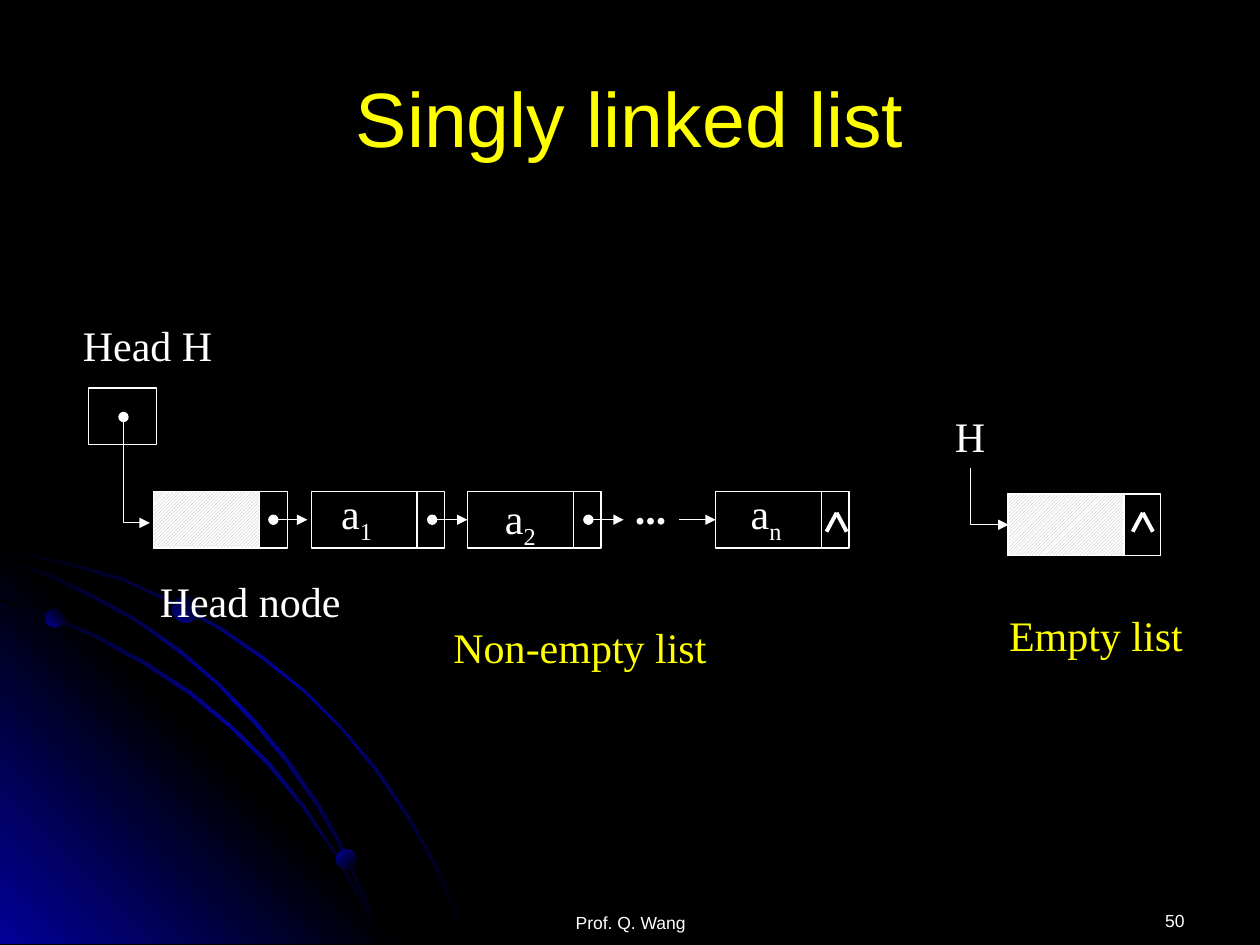
from copy import deepcopy
from lxml.etree import SubElement
from pptx import Presentation
from pptx.dml.color import RGBColor
from pptx.enum.dml import MSO_PATTERN
from pptx.enum.shapes import MSO_CONNECTOR as LINK, MSO_SHAPE as SHAPE
from pptx.enum.text import MSO_ANCHOR, MSO_AUTO_SIZE, PP_ALIGN
from pptx.oxml.ns import qn
from pptx.util import Inches, Pt

BLACK = RGBColor(0, 0, 0)
WHITE = RGBColor(255, 255, 255)
YELLOW = RGBColor(255, 255, 0)
BLUE = RGBColor(1, 1, 153)
HATCH = RGBColor(178, 178, 178)

OUTER_ARC = [
    (0.57, 4.47), (0.28, 4.41), (0, 4.35), (0, 4.38), (0.28, 4.43), (0.56, 4.49),
    (0.97, 4.61), (1.35, 4.78), (1.73, 4.99), (2.08, 5.23), (2.41, 5.49), (2.71, 5.79),
    (2.98, 6.12), (3.23, 6.49), (3.37, 6.73), (3.5, 6.98), (3.6, 7.23), (3.7, 7.49),
    (3.72, 7.49), (3.62, 7.23), (3.52, 6.98), (3.39, 6.73), (3.25, 6.48), (3, 6.11),
    (2.72, 5.78), (2.42, 5.48), (2.09, 5.21), (1.74, 4.97), (1.36, 4.77), (0.98, 4.59)]
CORNER = [(3.22, 7.49), (0, 7.49), (0, 4.27)]
INNER_ARC = [
    (2.85, 7.14), (2.94, 7.32), (3.01, 7.49), (3.03, 7.49), (2.96, 7.3), (2.86, 7.12),
    (2.66, 6.76), (2.42, 6.4), (2.15, 6.06), (1.84, 5.76), (1.52, 5.49), (1.17, 5.26),
    (0.79, 5.05), (0.41, 4.88), (0, 4.75), (0, 4.77), (0.39, 4.9), (0.77, 5.07),
    (1.15, 5.28), (1.5, 5.51), (1.83, 5.78), (2.13, 6.08), (2.4, 6.41), (2.65, 6.77)]
MIDDLE_ARC = [
    (0, 4.42), (0, 4.44), (0.36, 4.57), (0.74, 4.75), (1.09, 4.94), (1.42, 5.18),
    (1.73, 5.44), (2.02, 5.75), (2.27, 6.05), (2.52, 6.41), (2.67, 6.67), (2.8, 6.94),
    (2.92, 7.22), (3.01, 7.49), (3.03, 7.49), (2.94, 7.2), (2.82, 6.93), (2.69, 6.65),
    (2.54, 6.39), (2.29, 6.03), (2.04, 5.73), (1.75, 5.43), (1.44, 5.16), (1.11, 4.93),
    (0.76, 4.73), (0.39, 4.55)]
GLOW = [BLACK, BLUE, BLACK]
SWEEPS = [(OUTER_ARC, GLOW, 45), (CORNER, [BLUE, BLACK, BLUE], 315),
          (INNER_ARC, GLOW, 45), (MIDDLE_ARC, GLOW, 45)]
BEADS = [(0.36, 4.83, 0.15, 315), (2.67, 6.74, 0.16, 45), (1.37, 4.73, 0.21, 315)]

ROW_TOP, NODE_W, NODE_H, DATA_W = 3.9, 1.06, 0.45, 0.84
ROW_MID = ROW_TOP + NODE_H / 2
HEAD_X = 1.22
NODES = [("1", 2.47, 2.61, 3.82), ("2", 3.71, 3.91, 3.86), ("n", 5.68, 5.86, 3.82)]
POINTERS = [(2.17, 2.44, None), (3.43, 3.71, "2"), (4.67, 4.95, None)]
NULL_TIPS = [6.64, 9.07]
LABELS = [
    ("Head H", 0.56, 2.49, 1.23, WHITE),
    ("Head node", 1.17, 4.52, 1.64, WHITE),
    ("H", 7.48, 3.21, 0.44, WHITE),
    ("Non-empty list", 3.5, 4.88, 2.21, YELLOW),
    ("Empty list", 7.91, 4.79, 1.58, YELLOW)]
FOOTERS = [("50", 7.17, 7.01, 2.33, PP_ALIGN.RIGHT),
           ("Prof. Q. Wang", 3.42, 7.03, 3.17, PP_ALIGN.CENTER)]

deck = Presentation()
deck.slide_width, deck.slide_height = Inches(10), Inches(7.5)
slide = deck.slides.add_slide(deck.slide_layouts[5])
slide.background.fill.solid()
slide.background.fill.fore_color.rgb = BLACK
shapes = slide.shapes


def outline(item, weight=0.75):
    item.line.color.rgb = WHITE
    item.line.width = Pt(weight)


def add_ends(item, head=None, tail=None):
    for tag, kind in (("a:headEnd", head), ("a:tailEnd", tail)):
        if kind:
            SubElement(item.line._get_or_add_ln(), qn(tag), type=kind)


def shade(item, colors, angle):
    item.shadow.inherit = False
    item.line.fill.background()
    item.fill.gradient()
    stop_list = item._element.spPr.find(qn("a:gradFill")).find(qn("a:gsLst"))
    for _ in colors[2:]:
        stop_list.append(deepcopy(stop_list[0]))
    for i, (stop, color) in enumerate(zip(item.fill.gradient_stops, colors)):
        stop.color.rgb = color
        stop.position = i / (len(colors) - 1)
    item.fill.gradient_angle = 360 - angle


def trace(points, close):
    builder = shapes.build_freeform(*map(Inches, points[0]))
    builder.add_line_segments([tuple(map(Inches, p)) for p in points[1:]], close=close)
    return builder.convert_to_shape()


def box(x, y, w, h, hatched=False):
    rect = shapes.add_shape(SHAPE.RECTANGLE, *map(Inches, (x, y, w, h)))
    rect.shadow.inherit = False
    if hatched:
        rect.fill.patterned()
        rect.fill.pattern = MSO_PATTERN.LIGHT_UPWARD_DIAGONAL
        rect.fill.fore_color.rgb = HATCH
        rect.fill.back_color.rgb = WHITE
    else:
        rect.fill.background()
    outline(rect)
    return rect


def line(x1, y1, x2, y2, weight=0.75, head=None, tail=None, kind=LINK.STRAIGHT):
    link = shapes.add_connector(kind, *map(Inches, (x1, y1, x2, y2)))
    outline(link, weight)
    add_ends(link, head, tail)
    SubElement(link._element.spPr, qn("a:effectLst"))
    return link


def label(text, x, y, w, color=WHITE, subscript="", bold=False):
    frame = shapes.add_textbox(*map(Inches, (x, y, w, 0.5))).text_frame
    frame.word_wrap = False
    frame.auto_size = MSO_AUTO_SIZE.SHAPE_TO_FIT_TEXT
    para = frame.paragraphs[0]
    para.font.name, para.font.size, para.font.bold = "Times New Roman", Pt(24), bold
    para.font.color.rgb = color
    para.add_run().text = text
    if subscript:
        index = para.add_run()
        index.text = subscript
        index.font._element.set("baseline", "-25000")


for points, colors, angle in SWEEPS:
    shade(trace(points, True), colors, angle)
for x, y, size, angle in BEADS:
    bead = shapes.add_shape(SHAPE.OVAL, *map(Inches, (x, y, size, size)))
    shade(bead, [BLUE, BLACK], angle)

title = shapes.title
title.left, title.top, title.width, title.height = map(Inches, (0.5, 0.3, 9, 1.25))
title.text_frame.text = "Singly linked list"
title.text_frame.vertical_anchor = MSO_ANCHOR.MIDDLE
heading = title.text_frame.paragraphs[0]
heading.alignment = PP_ALIGN.CENTER
heading.font.name, heading.font.size = "Arial", Pt(44)
heading.font.color.rgb = YELLOW

for text, x, y, w, align in FOOTERS:
    frame = shapes.add_textbox(*map(Inches, (x, y, w, 0.5))).text_frame
    frame.word_wrap = True
    frame.margin_top = Inches(0.21)
    note = frame.paragraphs[0]
    note.text, note.alignment = text, align
    note.font.name, note.font.size = "Arial", Pt(10)
    note.font.color.rgb = WHITE

box(0.7, 3.08, 0.54, NODE_H)
box(HEAD_X, ROW_TOP, NODE_W, NODE_H)
box(HEAD_X, ROW_TOP, DATA_W, NODE_H, hatched=True)
box(8, 3.92, 1.21, 0.49)
box(8, 3.92, 0.92, 0.49, hatched=True)

nodes = {}
for index, x, text_x, text_y in NODES:
    nodes[index] = box(x, ROW_TOP, NODE_W, NODE_H)
    line(x + DATA_W, ROW_TOP, x + DATA_W, ROW_TOP + NODE_H)
    label("a", text_x, text_y, 0.46, subscript=index)

for start, end, target in POINTERS:
    pointer = line(start, ROW_MID, end, ROW_MID, head="oval", tail="triangle")
    if target:
        pointer.end_connect(nodes[target], 1)
label("...", 4.94, 3.78, 0.45, bold=True)
last_pointer = line(5.39, ROW_MID, 5.68, ROW_MID, tail="triangle")
last_pointer.end_connect(nodes["n"], 1)

head_pointer = trace([(0.98, 3.31), (0.98, 4.15), (1.19, 4.15)], False)
head_pointer.shadow.inherit = False
head_pointer.fill.background()
outline(head_pointer)
add_ends(head_pointer, "oval", "triangle")

empty_pointer = line(7.63, 3.79, 8.08, 4.09, tail="triangle", kind=LINK.ELBOW)
bend = empty_pointer._element.spPr
bend.find(qn("a:prstGeom")).set("prst", "bentConnector2")
bend.find(qn("a:xfrm")).set("rot", "16200000")
bend.find(qn("a:xfrm")).set("flipH", "1")

for tip in NULL_TIPS:
    for side in (-0.08, 0.08):
        line(tip + side, 4.22, tip, 4.07, weight=2.25)
for text, x, y, w, color in LABELS:
    label(text, x, y, w, color)

deck.save("out.pptx")
